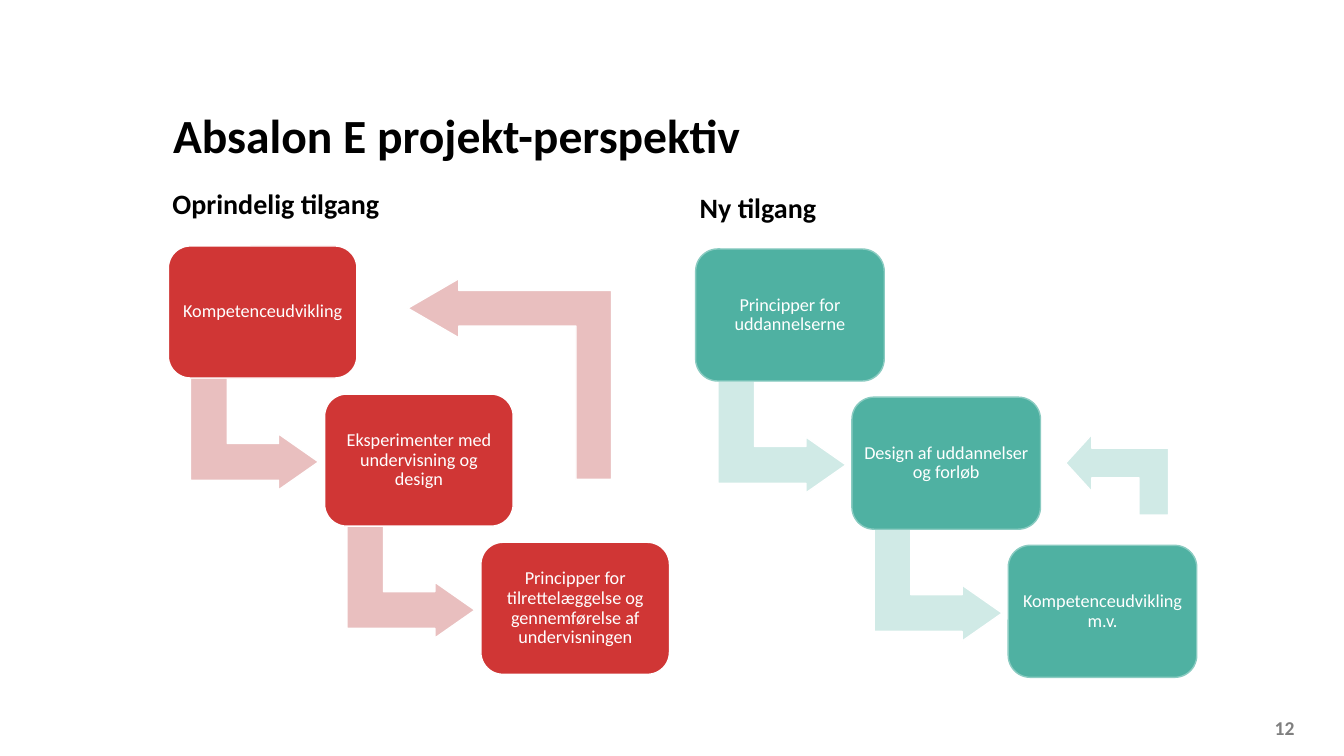
from pptx import Presentation
from pptx.dml.color import RGBColor
from pptx.enum.shapes import MSO_SHAPE
from pptx.enum.text import MSO_ANCHOR, PP_ALIGN
from pptx.util import Emu, Pt

ROUND_RECT = MSO_SHAPE.ROUNDED_RECTANGLE
BENT_ARROW = MSO_SHAPE.BENT_UP_ARROW
LEFT, CENTER, RIGHT = PP_ALIGN.LEFT, PP_ALIGN.CENTER, PP_ALIGN.RIGHT
TOP, MIDDLE, BOTTOM = MSO_ANCHOR.TOP, MSO_ANCHOR.MIDDLE, MSO_ANCHOR.BOTTOM

EMU_PER_PX = 9144  # 100 px to the inch
FONT = "Calibri"
BLACK, WHITE, GREY = "000000", "FFFFFF", "7F7F7F"
RED, PALE_RED = "D03635", "E9BFBF"
TEAL, PALE_TEAL, TEAL_LINE = "4FB1A2", "D0EAE6", "8ACBC1"

BOX_W, BOX_H = 187, 131
STEP_X, STEP_Y = 155, 147
ARROW_W, ARROW_H = 111, 127
ARROW_DX, ARROW_DY = 30, 123  # from a box to the arrow below it


def px(n):
    return Emu(n * EMU_PER_PX)


def rgb(value):
    return RGBColor.from_string(value)


def write(sp, text, size, color, bold=False, align=LEFT, anchor=TOP, inset=0, spacing=1.0):
    tf = sp.text_frame
    tf.word_wrap = True
    tf.vertical_anchor = anchor
    tf.margin_left = tf.margin_right = tf.margin_top = tf.margin_bottom = px(inset)
    p = tf.paragraphs[0]
    p.text = text
    p.alignment = align
    p.line_spacing = spacing
    p.font.name = FONT
    p.font.size = Pt(size)
    p.font.bold = bold
    p.font.color.rgb = rgb(color)


def add_text(slide, x, y, w, h, text, size, color, **style):
    sp = slide.shapes.add_textbox(px(x), px(y), px(w), px(h))
    write(sp, text, size, color, bold=True, **style)


def add_preset(slide, preset, x, y, w, h, fill, line, adjustments):
    sp = slide.shapes.add_shape(preset, px(x), px(y), px(w), px(h))
    sp.shadow.inherit = False
    sp.fill.solid()
    sp.fill.fore_color.rgb = rgb(fill)
    sp.line.color.rgb = rgb(line)
    sp.line.width = Pt(1)
    for i, value in enumerate(adjustments):
        sp.adjustments[i] = value
    return sp


def add_arrow(slide, x, y, w, h, fill, rotation, adjustments):
    sp = add_preset(slide, BENT_ARROW, x, y, w, h, fill, WHITE, adjustments)
    sp.rotation = rotation


def add_staircase(slide, x, y, labels, fill, line, arrow_fill):
    for i, label in enumerate(labels):
        left, top = x + i * STEP_X, y + i * STEP_Y
        if i < len(labels) - 1:
            add_arrow(slide, left + ARROW_DX, top + ARROW_DY, ARROW_W, ARROW_H,
                      arrow_fill, 90, (0.328, 0.25, 0.358))
        box = add_preset(slide, ROUND_RECT, left, top, BOX_W, BOX_H, fill, line, (0.167,))
        write(box, label, 13, WHITE, align=CENTER, anchor=MIDDLE, inset=5, spacing=0.9)


def main():
    prs = Presentation()
    prs.slide_width, prs.slide_height = px(1333), px(750)
    slide = prs.slides.add_slide(prs.slide_layouts[6])

    # Title and page number
    add_text(slide, 162, 86, 936, 102, "Absalon E projekt-perspektiv", 34, BLACK,
             anchor=MIDDLE, inset=10, spacing=0.88)
    add_text(slide, 1241, 714, 43, 20, "12", 14, GREY, align=RIGHT, anchor=BOTTOM)

    # Original approach
    add_text(slide, 171, 185, 255, 34, "Oprindelig tilgang", 20, BLACK)
    add_staircase(slide, 167, 244, [
        "Kompetenceudvikling",
        "Eksperimenter med undervisning og design",
        "Principper for tilrettelæggelse og gennemførelse af undervisningen",
    ], RED, WHITE, PALE_RED)
    add_arrow(slide, 406, 275, 199, 202, PALE_RED, 270, (0.177, 0.147, 0.254))

    # New approach
    add_text(slide, 694, 189, 255, 34, "Ny tilgang", 20, BLACK)
    add_staircase(slide, 690, 247, [
        "Principper for uddannelserne",
        "Design af uddannelser og forløb",
        "Kompetenceudvikling m.v.",
    ], TEAL, TEAL_LINE, PALE_TEAL)
    add_arrow(slide, 1068, 420, 80, 102, PALE_TEAL, 270, (0.366, 0.354, 0.323))

    prs.save("out.pptx")


if __name__ == "__main__":
    main()
